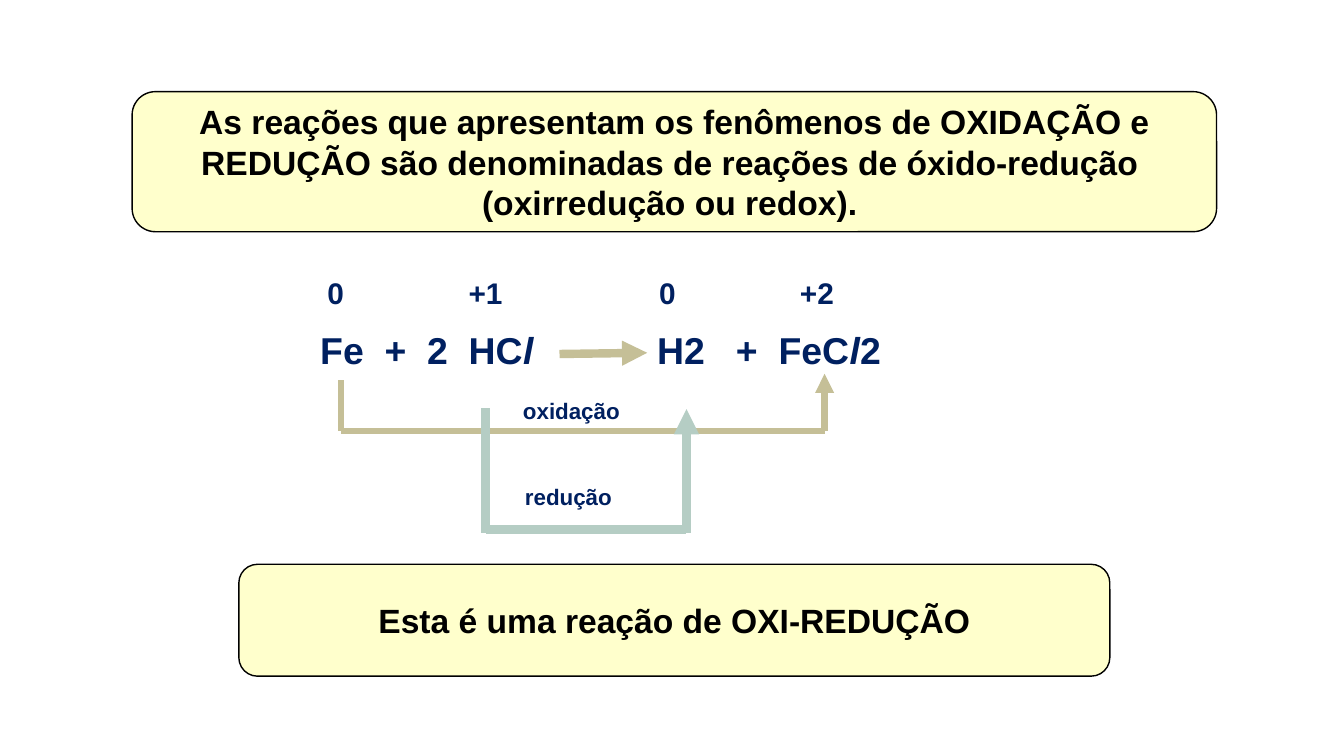
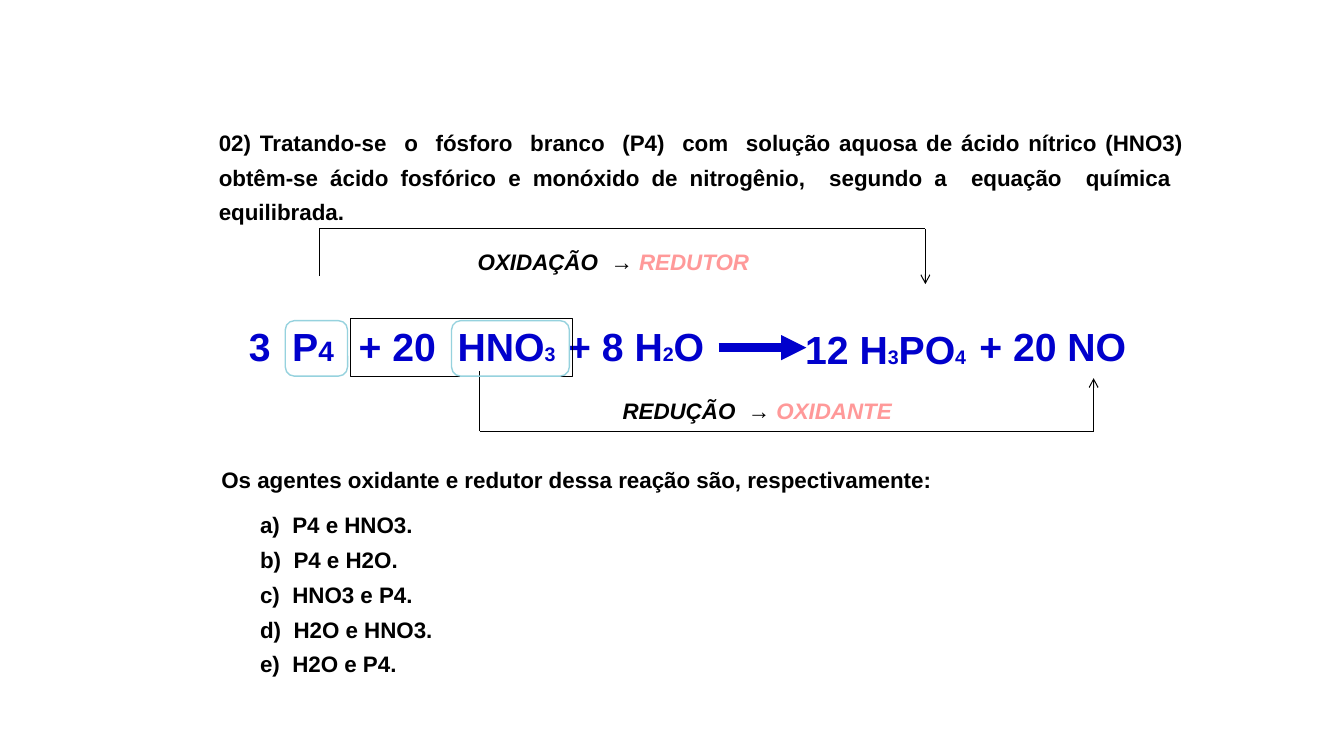
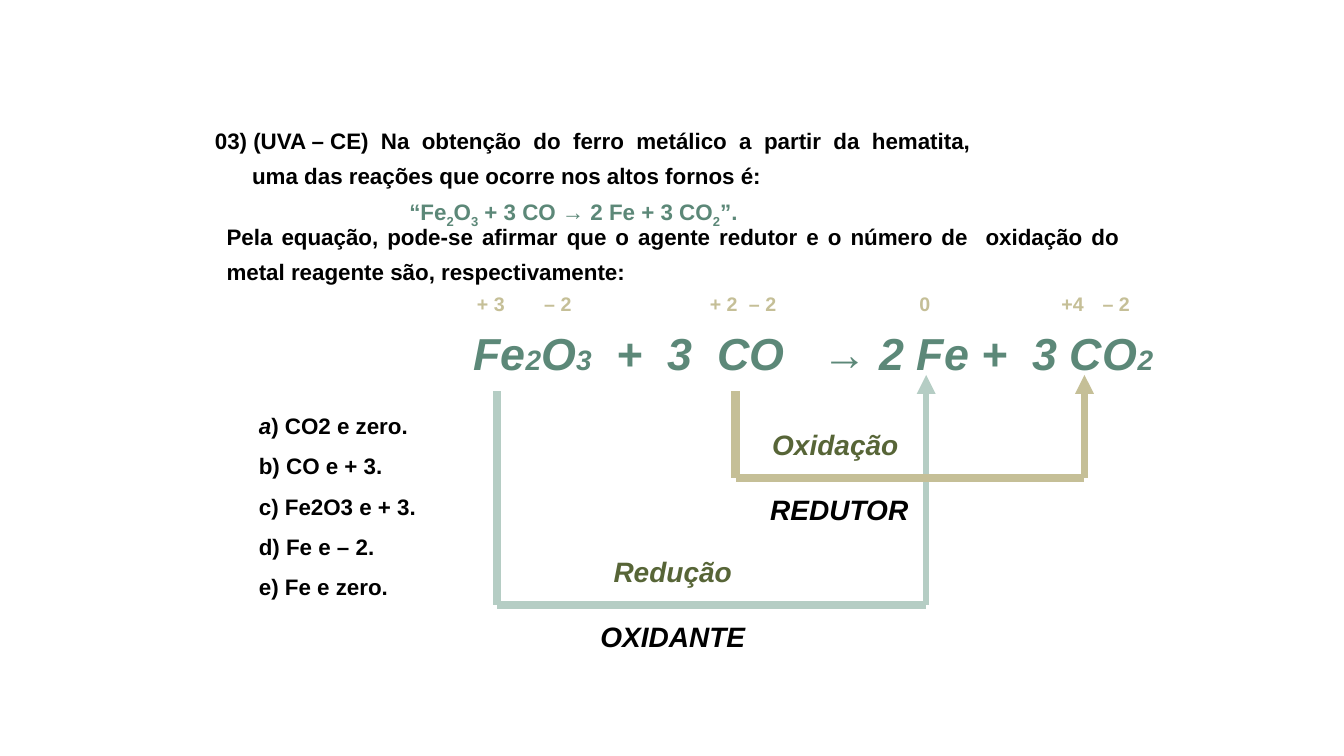
from itertools import cycle

from lxml import etree
from pptx import Presentation
from pptx import util as u
from pptx.dml.color import RGBColor
from pptx.enum import shapes, text
from pptx.oxml.ns import qn

BLACK = RGBColor(0, 0, 0)
CREAM = RGBColor(0xFF, 0xFF, 0xCC)
NAVY = RGBColor(0x00, 0x20, 0x60)
BLUE = RGBColor(0x00, 0x00, 0xCC)
PINK = RGBColor(0xFF, 0x99, 0x99)
SKY = RGBColor(0x96, 0xD2, 0xDE)
TAN = RGBColor(0xC5, 0xBF, 0x97)
MINT = RGBColor(0xB5, 0xCD, 0xC4)
GREEN = RGBColor(0x5C, 0x88, 0x78)
OLIVE = RGBColor(0x57, 0x65, 0x37)
FONT = "Arial"
LEFT, CENTER, JUSTIFY = text.PP_ALIGN.LEFT, text.PP_ALIGN.CENTER, text.PP_ALIGN.JUSTIFY
TOP, MIDDLE = text.MSO_ANCHOR.TOP, text.MSO_ANCHOR.MIDDLE
BOX, ROUND = shapes.MSO_SHAPE.RECTANGLE, shapes.MSO_SHAPE.ROUNDED_RECTANGLE

INTRO = ("As reações que apresentam os fenômenos de OXIDAÇÃO e REDUÇÃO são denominadas "
         "de reações de óxido-redução  (oxirredução ou redox). ")
INTRO_AT = (3.33, 2.31, 27.33, 3.53)
CONCLUSION = "Esta é uma reação de OXI-REDUÇÃO"
CONCLUSION_AT = (6.02, 14.22, 21.95, 2.82)
IRON_SIDES = [("Fe  +  2  HC|l", 7.82), ("H2   +  FeC|l|2", 16.31)]
IRON_NUMBERS = [("0", 8), ("+1", 11.56), ("0", 16.36), ("+2", 19.91)]
IRON_LABELS = [("oxidação", 12.93, 9.88), ("redução", 12.98, 12.04)]

PHOSPHORUS = ("02) Tratando-se  o  fósforo  branco  (P4)  com  solução aquosa de ácido nítrico (HNO3) "
              "obtêm-se ácido fosfórico e monóxido de nitrogênio,  segundo a  equação  química  equilibrada.")
PHOSPHORUS_TERMS = [
    ("3  P|4", 6.02, 8, 2.69, 20),
    ("+ 8 H|2|O", 14.07, 8, 3.99, 14),
    ("12 H|3|PO|4", 20.04, 8.08, 4.62, 14),
    ("+ 20  HNO|3", 8.79, 8, 5.54, 14),
    ("+ 20 NO", 24.43, 8, 4.27, 14),
]
AGENTS = [("REDUÇÃO  |→ |OXIDANTE", 15.44, 9.88), ("OXIDAÇÃO  |→ |REDUTOR", 11.79, 6.12)]
HIGHLIGHTS = [(11.38, 2.97), (7.19, 1.57)]
ASK = "Os agentes oxidante e redutor dessa reação são, respectivamente:"
PHOSPHORUS_OPTIONS = ["a)  P4 e HNO3.", "b)  P4 e H2O.", "c)  HNO3 e P4.", "d)  H2O e HNO3.", "e)  H2O e P4."]

HEMATITE = "03) (UVA – CE)  Na  obtenção  do  ferro  metálico  a  partir  da  hematita,"
HEMATITE_END = "uma das reações que ocorre nos altos fornos é:"
HEMATITE_QUOTE = "“Fe|2|O|3| + 3 CO → 2 Fe + 3 CO|2|”."
HEMATITE_ASK = ("Pela equação, pode-se afirmar que o agente redutor e o número de  oxidação do "
                "metal reagente são, respectivamente:")
HEMATITE_EQUATION = "Fe|2|O|3|  +  3  CO   |→| 2 Fe +  3 CO|2"
HEMATITE_OPTIONS = ["a|) CO2 e zero.", "b) CO e + 3.", "c) Fe2O3 e + 3.", "d) Fe e – 2.", "e) Fe e zero."]
HEMATITE_NUMBERS = [("+ 3", 12.37), ("– 2", 14.06), ("+ 2", 18.24), ("– 2", 19.22),
                    ("0", 23.31), ("+4", 27.03), ("– 2", 28.13)]
HEMATITE_LABELS = [("Redução", "OXIDANTE", 14.86, 13.84, 4.19), ("Oxidação ", "REDUTOR", 19.13, 10.64, 4.04)]


def cm(*values):
    return [u.Cm(v) for v in values]


def write(tf, lines, size=16, color=BLACK, italic=False, align=LEFT, spacing=1.0,
          before=0, indent=0, styles=({},)):
    for line in lines:
        p = tf.add_paragraph() if tf.paragraphs[0].runs else tf.paragraphs[0]
        p.alignment, p.line_spacing, p.space_before = align, spacing, u.Pt(before)
        pPr = p._p.get_or_add_pPr()
        pPr.set("marL", str(u.Cm(indent)))
        pPr.set("indent", "0")
        etree.SubElement(pPr, qn("a:buNone"))
        for part, style in zip(line.split("|"), cycle(styles)):
            r = p.add_run()
            r.text = part
            f = r.font
            f.name, f.bold = FONT, True
            f.size = u.Pt(style.get("size", size))
            f.italic = style.get("italic", italic)
            f.color.rgb = style.get("color", color)
            if "baseline" in style:
                r._r.get_or_add_rPr().set("baseline", style["baseline"])


def frame(sp, at, anchor=TOP, wrap=True):
    sp.left, sp.top, sp.width, sp.height = cm(*at)
    tf = sp.text_frame
    tf.word_wrap, tf.vertical_anchor, tf.auto_size = wrap, anchor, text.MSO_AUTO_SIZE.NONE
    return tf


def label(s, lines, at, anchor=TOP, wrap=True, **fmt):
    sp = s.shapes.add_textbox(*cm(*at))
    write(frame(sp, at, anchor, wrap), lines, **fmt)
    return sp


def panel(s, at, kind=ROUND, fill=None, line=BLACK, width=1):
    sp = s.shapes.add_shape(kind, *cm(*at))
    sp.shadow.inherit = False
    if fill is None:
        sp.fill.background()
    else:
        sp.fill.solid()
        sp.fill.fore_color.rgb = fill
    sp.line.color.rgb, sp.line.width = line, u.Pt(width)
    return sp


def line(s, start, end, color, width, head=None):
    c = s.shapes.add_connector(shapes.MSO_CONNECTOR.STRAIGHT, *cm(*start, *end))
    c.line.color.rgb, c.line.width = color, u.Pt(width)
    if head:
        etree.SubElement(c.line._get_or_add_ln(), qn("a:tailEnd"), type=head)
    etree.SubElement(c._element.spPr, qn("a:effectLst"))


def bracket(s, start, base, end, color, width, tip_width=None, head="triangle", overlap=0):
    (x1, y1), (x2, y2) = start, end
    line(s, (x1, y1), (x1, base + overlap), color, width)
    line(s, (x1, base), (x2, base), color, width)
    line(s, (x2, base + overlap), (x2, y2), color, tip_width or width, head)


def new_slide(prs, layout, title_at):
    s = prs.slides.add_slide(prs.slide_layouts[layout])
    return s, frame(s.shapes.title, title_at, MIDDLE)


def options(s, lines, at, **fmt):
    write(frame(s.placeholders[1], at, MIDDLE, wrap=False), lines, **fmt)


def iron_slide(prs):
    s, title = new_slide(prs, 5, INTRO_AT)
    write(title, [INTRO], size=24, align=CENTER)
    backdrop = panel(s, INTRO_AT, fill=CREAM)
    s.shapes.title._element.addprevious(backdrop._element)
    for side, x in IRON_SIDES:
        label(s, [side], (x, 8.13, 6.5, 1.4), size=26.7, color=NAVY, styles=({}, {"italic": True}))
    for number, x in IRON_NUMBERS:
        label(s, [number], (x, 6.81, 2, 1.2), size=21.3, color=NAVY)
    line(s, (14.1, 8.92), (16.31, 8.89), TAN, 6, "triangle")
    bracket(s, (8.6, 9.58), 10.87, (20.78, 9.42), TAN, 4.5)
    bracket(s, (12.24, 10.29), 13.34, (17.3, 10.31), MINT, 6, overlap=0.1)
    for name, x, y in IRON_LABELS:
        label(s, [name], (x, y, 4, 1), color=NAVY)
    conclusion = panel(s, CONCLUSION_AT, fill=CREAM)
    write(frame(conclusion, CONCLUSION_AT, MIDDLE), [CONCLUSION], size=24, align=CENTER)


def phosphorus_slide(prs):
    s, title = new_slide(prs, 1, (5.26, 2.95, 24.82, 2.82))
    write(title, [PHOSPHORUS], align=JUSTIFY, spacing=1.3)
    for term, x, y, w, small in PHOSPHORUS_TERMS:
        label(s, [term], (x, y, w, 1.45), wrap=False, size=28, color=BLUE, styles=({}, {"size": small}))
    panel(s, (8.84, 8.03, 5.6, 1.45), kind=BOX, width=0.75)
    line(s, (18.11, 8.76), (20.32, 8.76), BLUE, 6, "triangle")
    label(s, [ASK], (5.33, 11.51, 23.22, 0.99), anchor=MIDDLE, spacing=1.2)
    options(s, PHOSPHORUS_OPTIONS, (6.3, 12.57, 4.93, 4.6), spacing=1.3)
    bracket(s, (12.09, 9.35), 10.87, (27.56, 9.53), BLACK, 0.75, head="arrow")
    bracket(s, (8.05, 6.96), 5.77, (23.32, 7.16), BLACK, 0.75, head="arrow")
    for x, w in HIGHLIGHTS:
        panel(s, (x, 8.08, w, 1.4), line=SKY)
    for agent, x, y in AGENTS:
        label(s, [agent], (x, y, 7.4, 0.94), wrap=False, italic=True,
              styles=({}, {"italic": False}, {"color": PINK}))


def hematite_slide(prs):
    s, title = new_slide(prs, 1, (5.16, 2.97, 25.1, 2.82))
    write(title, [HEMATITE], spacing=1.3)
    write(title, [HEMATITE_END], spacing=1.3, indent=0.94)
    write(title, [HEMATITE_QUOTE], spacing=1.3, indent=4.9, color=GREEN, styles=({}, {"baseline": "-25000"}))
    label(s, [HEMATITE_ASK], (5.46, 5.33, 23.01, 1.93), anchor=MIDDLE, align=JUSTIFY, spacing=1.3)
    options(s, HEMATITE_OPTIONS[:1], (6.27, 9.96, 4.52, 5.26), spacing=1.5, styles=({"italic": True}, {}))
    write(s.placeholders[1].text_frame, HEMATITE_OPTIONS[1:], spacing=1.5)
    small = {"size": 20}
    label(s, [HEMATITE_EQUATION], (11.68, 8.08, 17.75, 1.63), wrap=False, size=32, color=GREEN, italic=True,
          styles=({}, small, {}, small, {}, {"italic": False}, {}, small))
    for number, center in HEMATITE_NUMBERS:
        label(s, [number], (center - 0.6, 7.24, 1.2, 0.86), wrap=False, size=14, color=TAN, align=CENTER)
    bracket(s, (12.52, 9.86), 15.24, (23.34, 9.45), MINT, 6, tip_width=4.5)
    bracket(s, (18.54, 9.86), 12.04, (27.33, 9.45), TAN, 6, tip_width=4.5)
    for process, agent, x, y, w in HEMATITE_LABELS:
        sp = label(s, [process], (x, y, w, 2.82), wrap=False, size=20, color=OLIVE, italic=True, align=CENTER)
        write(sp.text_frame, [agent], size=20, italic=True, align=CENTER, before=23)


def main():
    prs = Presentation()
    prs.slide_width, prs.slide_height = cm(33.87, 19.05)
    for build in (iron_slide, phosphorus_slide, hematite_slide):
        build(prs)
    prs.save("out.pptx")


if __name__ == "__main__":
    main()
